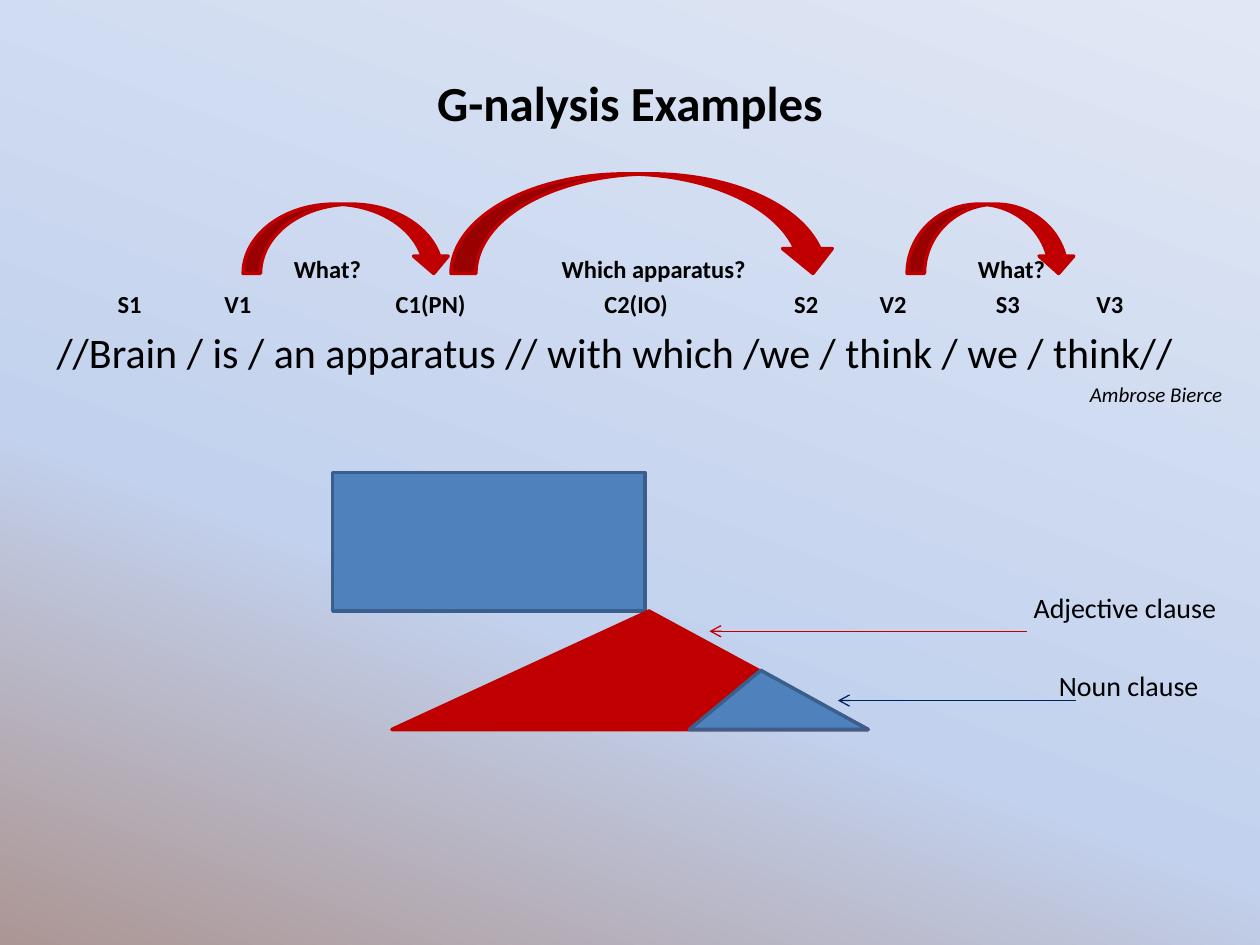
import copy
from dataclasses import dataclass

import pptx
import pptx.dml.color
import pptx.enum.shapes
import pptx.enum.text
import pptx.oxml
import pptx.oxml.ns
import pptx.util

Inches, Pt = pptx.util.Inches, pptx.util.Pt
RGB = pptx.dml.color.RGBColor.from_string
SHAPES = pptx.enum.shapes.MSO_SHAPE
ALIGN = pptx.enum.text.PP_ALIGN
ANCHOR = pptx.enum.text.MSO_ANCHOR
qn = pptx.oxml.ns.qn


@dataclass(frozen=True)
class Theme:
    font: str = "Calibri"
    ink: str = "000000"
    red: str = "C00000"
    blue: str = "4F81BD"
    blue_edge: str = "3A5F8C"
    navy: str = "002060"
    backdrop: tuple = ((0, "AC9694"), (0.37, "C2D1ED"), (1, "E1E8F5"))
    title: int = 28
    sentence: int = 24
    clause: int = 16
    label: int = 14
    author: int = 12
    edge: int = 2
    pointer: float = 0.75


THEME = Theme()


def paint_background(slide):
    fill = slide.background.fill
    fill.gradient()
    fill.gradient_angle = 70
    stop_list = slide._element.find(".//" + qn("a:gsLst"))
    stop_list.append(copy.deepcopy(stop_list[-1]))
    for stop, (position, colour) in zip(fill.gradient_stops, THEME.backdrop):
        stop.position = position
        stop.color.rgb = RGB(colour)


def add_frame(slide, box, anchor=ANCHOR.TOP):
    frame = slide.shapes.add_textbox(*map(Inches, box)).text_frame
    frame.word_wrap = True
    frame.vertical_anchor = anchor
    return frame


def write(paragraph, text, size, align=ALIGN.LEFT, **formats):
    paragraph.text = text
    paragraph.alignment = align
    for name, value in {"name": THEME.font, "size": Pt(size), **formats}.items():
        setattr(paragraph.font, name, value)
    paragraph.font.color.rgb = RGB(THEME.ink)


def add_centre_tabs(paragraph, centres):
    tabs = pptx.oxml.parse_xml(f"<a:tabLst {pptx.oxml.ns.nsdecls('a')}/>")
    for centre in centres:
        tab = tabs.makeelement(qn("a:tab"), {"pos": str(Inches(centre)), "algn": "ctr"})
        tabs.append(tab)
    paragraph._p.get_or_add_pPr().append(tabs)


def add_title(slide, box):
    paragraph = add_frame(slide, box, ANCHOR.MIDDLE).paragraphs[0]
    write(paragraph, "G-nalysis Examples", THEME.title, ALIGN.CENTER, bold=True)


def add_parsed_sentence(slide, box):
    questions = {2.15: "What?", 4.74: "Which apparatus?", 7.58: "What?"}
    roles = {0.58: "S1", 1.44: "V1", 2.97: "C1(PN)", 4.6: "C2(IO)",
             5.95: "S2", 6.64: "V2", 7.55: "S3", 8.36: "V3"}
    frame = add_frame(slide, box)
    lines = [frame.paragraphs[0]] + [frame.add_paragraph() for _ in range(3)]
    for line, labels in zip(lines, (questions, roles)):
        add_centre_tabs(line, labels)
        write(line, "".join("\t" + label for label in labels.values()),
              THEME.label, bold=True)
    write(lines[2], "//Brain / is / an apparatus // with which /we / think / we / think//",
          THEME.sentence)
    write(lines[3], "Ambrose Bierce", THEME.author, ALIGN.RIGHT, italic=True)
    for line in lines[1:]:
        line.space_before = Pt(line.font.size.pt * 0.2)


def add_block(slide, kind, box, fill, edge, peak=None):
    block = slide.shapes.add_shape(kind, *map(Inches, box))
    block.shadow.inherit = False
    block.fill.solid()
    block.fill.fore_color.rgb = RGB(fill)
    block.line.color.rgb = RGB(edge)
    block.line.width = Pt(THEME.edge)
    if peak is not None:
        block.adjustments[0] = peak


def add_question_arrows(slide, box):
    left, top, width, height = box
    bottom = top + height
    for offset, span, rise in ((0, 1.65, 0.55), (1.65, 3.07, height), (5.27, 1.34, 0.55)):
        add_block(slide, SHAPES.CURVED_DOWN_ARROW,
                  (left + offset, bottom - rise, span, rise), THEME.red, THEME.red)


def add_clause_diagram(slide, box):
    left, top, width, height = box
    right, bottom = left + width, top + height
    add_block(slide, SHAPES.RECTANGLE, (left, top, 2.48, 1.1), THEME.blue, THEME.blue_edge)
    add_block(slide, SHAPES.ISOSCELES_TRIANGLE, (right - 3.78, bottom - 0.94, 3.78, 0.94),
              THEME.red, THEME.red, 0.54)
    add_block(slide, SHAPES.ISOSCELES_TRIANGLE, (right - 1.42, bottom - 0.47, 1.42, 0.47),
              THEME.blue, THEME.blue_edge, 0.4)


def add_pointer(slide, start, end, y, colour):
    pointer = slide.shapes.add_connector(
        pptx.enum.shapes.MSO_CONNECTOR.STRAIGHT, *map(Inches, (start, y, end, y)))
    pointer.line.color.rgb = RGB(colour)
    pointer.line.width = Pt(THEME.pointer)
    line = pointer.line._get_or_add_ln()
    line.append(line.makeelement(qn("a:tailEnd"), {"type": "arrow"}))
    properties = pointer._element.spPr
    properties.append(properties.makeelement(qn("a:effectLst"), {}))


def add_clause_labels(slide, box):
    left, top, width, height = box
    clauses = (
        ("Adjective clause", 0, width, 8.15, 5.63, 5.01, THEME.red),
        ("Noun clause", 0.62, width - 0.14, 8.54, 6.65, 5.56, THEME.navy),
    )
    for text, drop, span, start, end, y, colour in clauses:
        frame = add_frame(slide, (left, top + drop, span, height - 0.62), ANCHOR.MIDDLE)
        write(frame.paragraphs[0], text, THEME.clause, ALIGN.RIGHT)
        add_pointer(slide, start, end, y, colour)


def main():
    deck = pptx.Presentation()
    deck.slide_width, deck.slide_height = Inches(10), Inches(7.5)
    slide = deck.slides.add_slide(deck.slide_layouts[6])
    paint_background(slide)
    add_title(slide, (0.5, 0.3, 9, 1.01))
    add_parsed_sentence(slide, (0.35, 1.97, 9.45, 1.35))
    add_question_arrows(slide, (1.93, 1.38, 6.61, 0.79))
    add_clause_diagram(slide, (2.64, 3.75, 4.25, 2.04))
    add_clause_labels(slide, (7.75, 4.64, 2, 0.98))
    deck.save("out.pptx")


if __name__ == "__main__":
    main()
